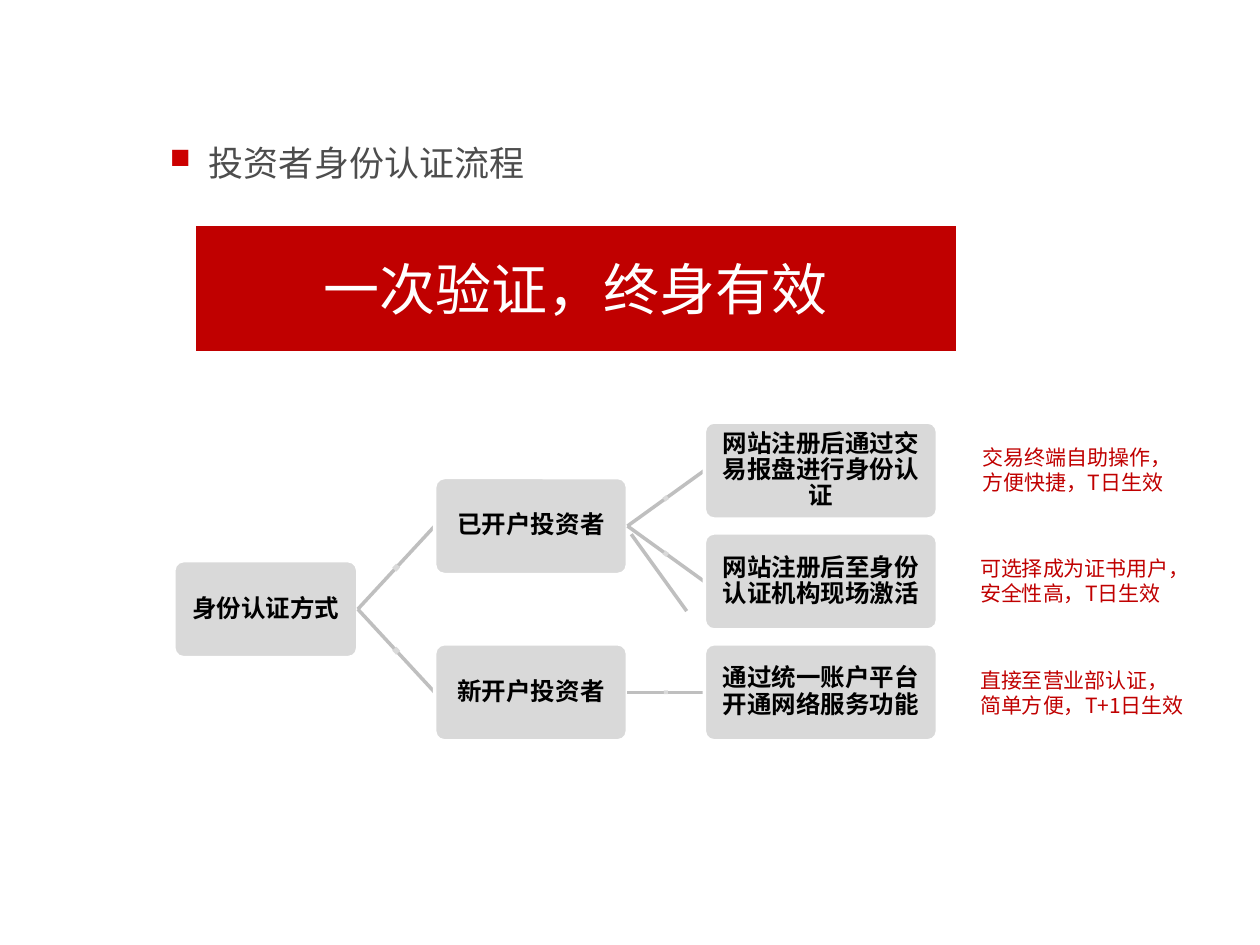
import math
from lxml import etree
from pptx import Presentation
from pptx.dml.color import RGBColor
from pptx.enum import shapes, text
from pptx.oxml import ns
from pptx.util import Inches, Pt

CJK, CJK_SC, LATIN = "Noto Sans CJK JP", "Noto Sans CJK SC", "Arial"
RED, GREY, LINE, WHITE = "C00000", "D9D9D9", "BFBFBF", "FFFFFF"
TITLE = "投资者身份认证流程"
BANNER = "一次验证，终身有效"
BOX_H = 0.77
COLUMNS = [(1.38, 1.46), (3.45, 1.53), (5.59, 1.85)]
NODES = [
    ("root", None, 0, 4.45, [("身份", LATIN), ("认证", CJK_SC), ("方式", LATIN)]),
    ("existing", "root", 1, 3.79, [("已开户投资者", LATIN)]),
    ("trading", "existing", 2, 3.35, [("网站注册后通过交易报盘进行身份认证", LATIN)]),
    ("on_site", "existing", 2, 4.23, [("网站注册后至身份认证机构现场激活", LATIN)]),
    ("new", "root", 1, 5.11, [("新开户投资者", LATIN)]),
    ("platform", "new", 2, 5.11, [("通过统一账户平台开通网络服务功能", LATIN)]),
]
EXTRA_LINK = (5.01, 4.24, 5.45, 4.85)
NOTES = [
    (7.7, 3.48, ["交易终端自助操作，", "方便快捷，T日生效"]),
    (7.68, 4.36, ["可选择成为证书用户，", "安全性高，T日生效"]),
    (7.68, 5.25, ["直接至营业部认证，", "简单方便，T+1日生效"]),
]


def color(value):
    return RGBColor.from_string(value)


def add_run(p, words, size, font, ink, bold=False):
    r = p.add_run()
    r.text = words
    r.font.size, r.font.name, r.font.bold = Pt(size), font, bold
    r.font.color.rgb = color(ink)
    ea = etree.SubElement(r.font._element, ns.qn("a:ea"))
    ea.set("typeface", font)


def add_box(kind, x, y, w, h, fill, border=None):
    sp = s.shapes.add_shape(kind, Inches(x), Inches(y), Inches(w), Inches(h))
    sp.shadow.inherit = False
    sp.fill.solid()
    sp.fill.fore_color.rgb = color(fill)
    if border:
        sp.line.color.rgb = color(border)
        sp.line.width = Pt(2)
    else:
        sp.line.fill.background()
    tf = sp.text_frame
    tf.word_wrap = True
    tf.vertical_anchor = text.MSO_ANCHOR.MIDDLE
    tf.paragraphs[0].alignment = text.PP_ALIGN.CENTER
    return sp


def add_text_box(x, y, w, h):
    tf = s.shapes.add_textbox(Inches(x), Inches(y), Inches(w), Inches(h)).text_frame
    tf.word_wrap = True
    return tf


def add_link(x1, y1, x2, y2):
    link = s.shapes.add_connector(shapes.MSO_CONNECTOR.STRAIGHT,
                                  Inches(x1), Inches(y1), Inches(x2), Inches(y2))
    link.line.color.rgb = color(LINE)
    link.line.width = Pt(2)
    etree.SubElement(link._element.spPr, ns.qn("a:effectLst"))


def add_joint(x1, y1, x2, y2):
    size = 0.05 * math.hypot(x2 - x1, y2 - y1)
    joint = add_box(shapes.MSO_SHAPE.RECTANGLE, (x1 + x2 - size) / 2,
                    (y1 + y2 - size) / 2, size, size, GREY)
    joint.rotation = math.degrees(math.atan2(y2 - y1, x2 - x1)) % 360


def add_node(x, y, w, runs):
    sp = add_box(shapes.MSO_SHAPE.ROUNDED_RECTANGLE, x, y, w, BOX_H, GREY, WHITE)
    sp.adjustments[0] = 0.1
    tf = sp.text_frame
    tf.margin_left = tf.margin_right = tf.margin_top = tf.margin_bottom = Inches(0.04)
    p = tf.paragraphs[0]
    p.line_spacing = 0.9
    for words, font in runs:
        add_run(p, words, 14, font, "000000", True)


prs = Presentation()
prs.slide_width, prs.slide_height = Inches(10), Inches(7.5)
s = prs.slides.add_slide(prs.slide_layouts[6])

banner = add_box(shapes.MSO_SHAPE.RECTANGLE, 1.54, 1.78, 6.06, 1.02, RED, WHITE)
add_run(banner.text_frame.paragraphs[0], BANNER, 32, CJK, WHITE)

p = add_text_box(0.75, 1.07, 8.94, 0.5).paragraphs[0]
p.level = 1
pPr = p._p.get_or_add_pPr()
pPr.set("marL", str(Inches(0.81)))
pPr.set("indent", str(Inches(-0.31)))
bullet_color = etree.SubElement(pPr, ns.qn("a:buClr"))
etree.SubElement(bullet_color, ns.qn("a:srgbClr")).set("val", "CC0000")
etree.SubElement(pPr, ns.qn("a:buSzPct")).set("val", "80000")
etree.SubElement(pPr, ns.qn("a:buChar")).set("char", "■")
add_run(p, TITLE, 20, LATIN, "4D4D4D")

for x, y, lines in NOTES:
    tf = add_text_box(x, y, 1.89, 0.5)
    tf.vertical_anchor = text.MSO_ANCHOR.MIDDLE
    tf.auto_size = text.MSO_AUTO_SIZE.SHAPE_TO_FIT_TEXT
    for i, words in enumerate(lines):
        p = tf.add_paragraph() if i else tf.paragraphs[0]
        add_run(p, words, 12, CJK, RED)

exits = {}
for name, parent, column, y, runs in NODES:
    x, w = COLUMNS[column]
    middle = y + BOX_H / 2
    if parent:
        ends = (*exits[parent], x, middle)
        add_link(*ends)
        add_joint(*ends)
    add_node(x, y, w, runs)
    exits[name] = (x + w, middle)
add_link(*EXTRA_LINK)

prs.save("out.pptx")
